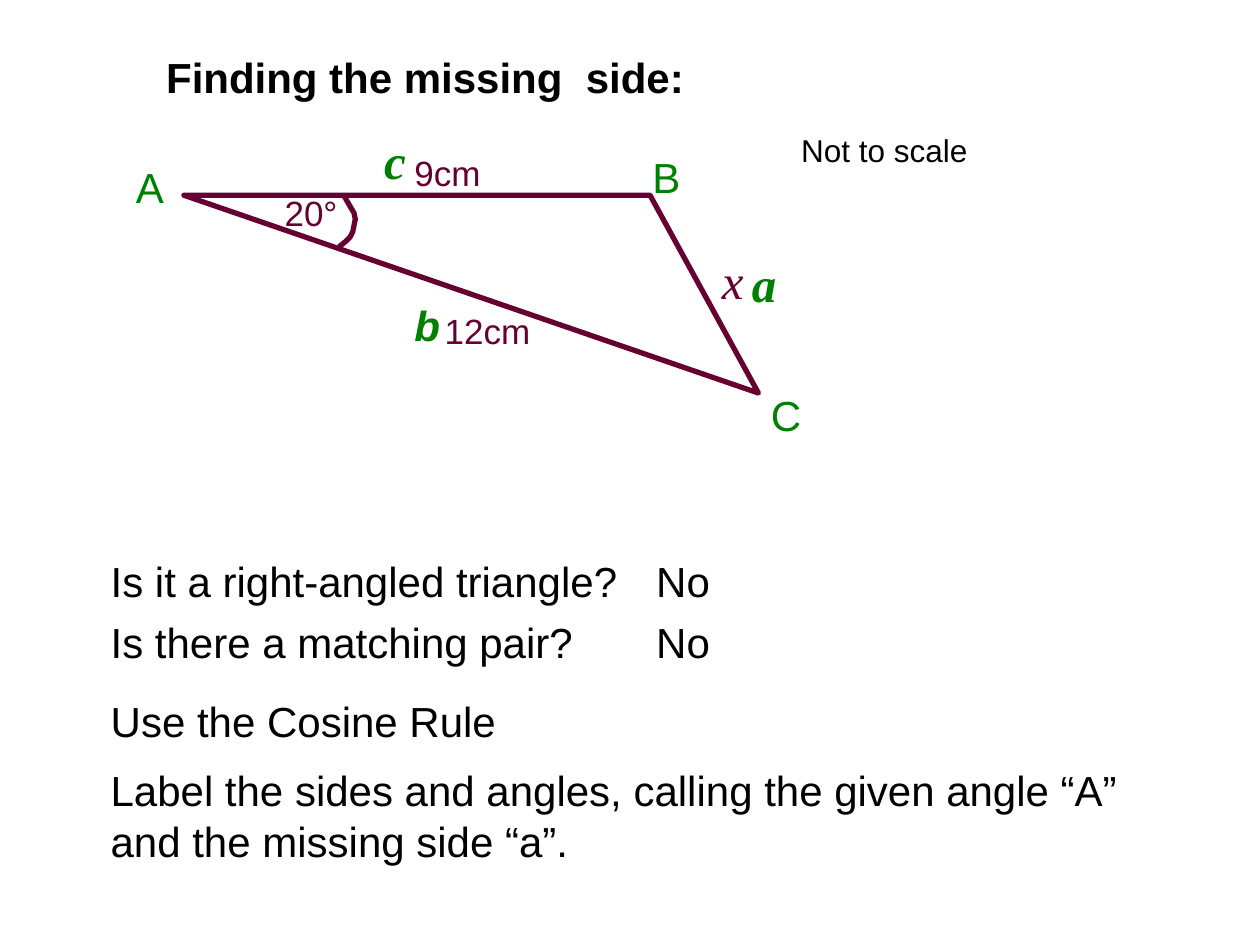
from lxml.etree import SubElement
from pptx import Presentation
from pptx.dml.color import RGBColor
from pptx.enum.text import MSO_AUTO_SIZE as AutoSize
from pptx.oxml.ns import qn
from pptx.util import Pt

PX = 9144
BLACK = RGBColor(0x00, 0x00, 0x00)
PLUM = RGBColor(0x66, 0x00, 0x33)
GREEN = RGBColor(0x00, 0x80, 0x00)
SANS = "Arial"
SERIF = "Times New Roman"

deck = Presentation()
deck.slide_width = 1000 * PX
deck.slide_height = 750 * PX
page = deck.slides.add_slide(deck.slide_layouts[6])


def add_outline(points, closed):
    builder = page.shapes.build_freeform(*points[0], scale=PX)
    builder.add_line_segments(points[1:], close=closed)
    outline = builder.convert_to_shape()
    outline.shadow.inherit = False
    outline.fill.background()
    outline.line.color.rgb = PLUM
    outline.line.width = Pt(3)
    SubElement(outline.line._get_or_add_ln(), qn("a:round"))


def add_text(words, left, top, width, height, size=24, color=BLACK,
             font=SANS, bold=False, italic=False, wrap=True):
    box = page.shapes.add_textbox(left * PX, top * PX, width * PX, height * PX)
    frame = box.text_frame
    frame.word_wrap = wrap
    frame.auto_size = AutoSize.SHAPE_TO_FIT_TEXT
    span = frame.paragraphs[0].add_run()
    span.text = words
    span.font.name = font
    span.font.size = Pt(size)
    span.font.bold = bold
    span.font.italic = italic
    span.font.color.rgb = color


angle_arc = [(273, 155), (274, 157), (278, 164), (281, 169), (282, 174),
             (281, 179), (280, 184), (278, 188), (274, 192), (269, 196)]
triangle = [(146, 155), (516, 155), (602, 312)]
add_outline(angle_arc, closed=False)
add_outline(triangle, closed=True)

add_text("Finding the missing  side:", 122, 36, 512, 50, bold=True)
add_text("Not to scale", 626, 99, 181, 40, size=18)

measures = [("9cm", 319, 115, 87), ("12cm", 343, 241, 118), ("20°", 216, 147, 79)]
for words, left, top, width in measures:
    add_text(words, left, top, width, 43, size=20, color=PLUM)
add_text("x", 563, 194, 55, 57, size=28, color=PLUM, font=SERIF, italic=True)

vertices = [("A", 98, 123, 47, True), ("B", 508, 115, 42, False), ("C", 602, 304, 47, True)]
for words, left, top, width, wrap in vertices:
    add_text(words, left, top, width, 50, color=GREEN, wrap=wrap)

sides = [("a", 587, 196, 40, 57, 28, SERIF), ("b", 319, 233, 40, 50, 24, SANS),
         ("c", 295, 99, 37, 57, 28, SERIF)]
for words, left, top, width, height, size, font in sides:
    add_text(words, left, top, width, height, size, GREEN, font,
             bold=True, italic=True, wrap=False)

questions = ["Is it a right-angled triangle?", "Is there a matching pair?"]
for row, question in enumerate(questions):
    top = 436 + 48 * row
    add_text(question, 78, top, 592, 50)
    add_text("No", 511, top, 106, 50)

add_text("Use the Cosine Rule", 78, 547, 529, 50)
add_text("Label the sides and angles, calling the given angle “A” "
         "and the missing side “a”.", 78, 602, 867, 91)

deck.save("out.pptx")
